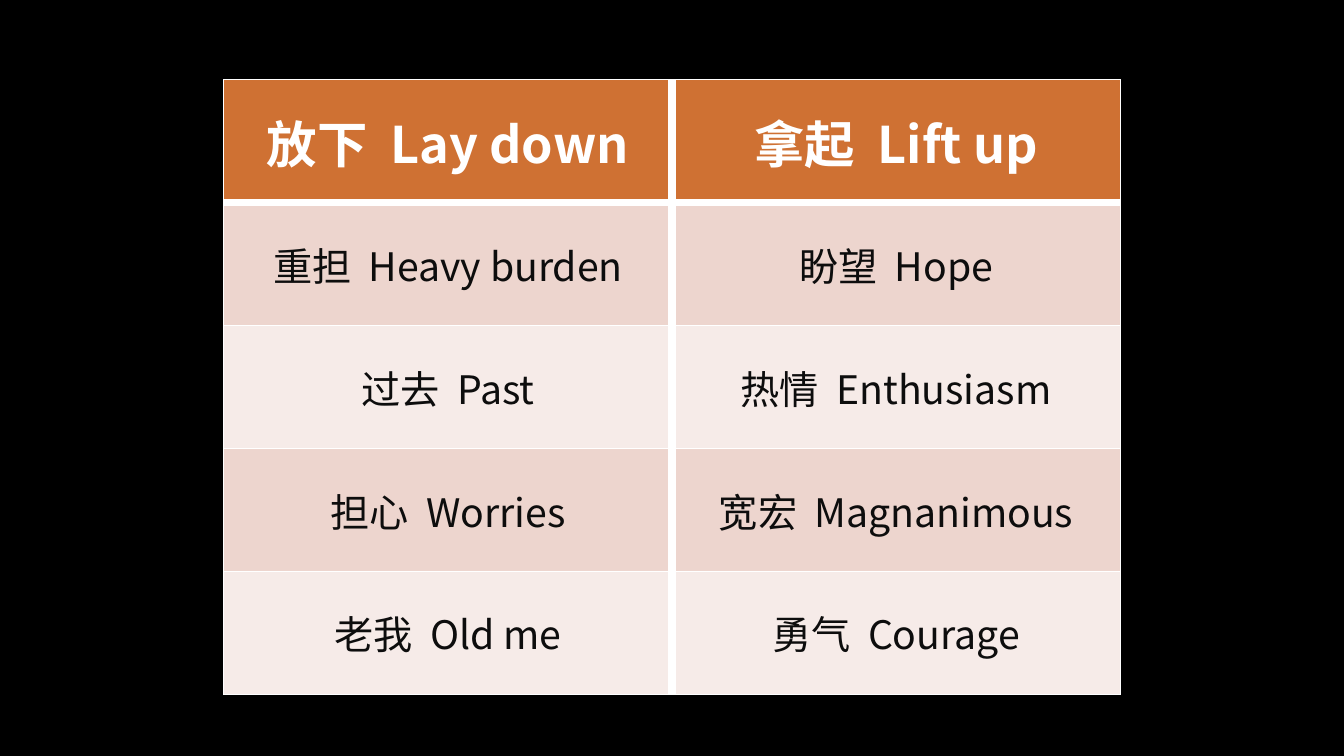
from lxml import etree
from pptx import Presentation
from pptx.dml.color import RGBColor
from pptx.enum.text import MSO_ANCHOR, PP_ALIGN
from pptx.oxml.ns import qn
from pptx.util import Inches, Pt

CENTER = PP_ALIGN.CENTER
MIDDLE = MSO_ANCHOR.MIDDLE
FONT = "Noto Sans CJK JP"
COLORS = {
    "background": "000000",
    "header": "CF7133",
    "header_text": "FFFFFF",
    "dark_band": "EDD5CE",
    "light_band": "F6EBE8",
    "body_text": "0D0D0D",
    "border": "FFFFFF",
}
ROWS = [
    [("放下", "Lay down"), ("拿起", "Lift up")],
    [("重担", "Heavy burden"), ("盼望", "Hope")],
    [("过去", "Past"), ("热情", "Enthusiasm")],
    [("担心", "Worries"), ("宽宏", "Magnanimous")],
    [("老我", "Old me"), ("勇气", "Courage")],
]


def rgb(name):
    return RGBColor.from_string(COLORS[name])


def set_borders(cell, widths):
    tcPr = cell._tc.get_or_add_tcPr()
    for i, (side, width) in enumerate(widths.items()):
        ln = etree.Element(qn(f"a:ln{side}"), w=str(Pt(width)))
        fill = etree.SubElement(ln, qn("a:solidFill"))
        etree.SubElement(fill, qn("a:srgbClr"), val=COLORS["border"])
        tcPr.insert(i, ln)


def write_phrase(cell, chinese, english, size, color, bold):
    cell.vertical_anchor = MIDDLE
    p = cell.text_frame.paragraphs[0]
    p.alignment = CENTER
    for text in (chinese, " ", english):
        r = p.add_run()
        r.text = text
        r.font.name = FONT
        r.font.size = Pt(size)
        r.font.bold = bold
        r.font.color.rgb = rgb(color)
        rPr = r._r.get_or_add_rPr()
        etree.SubElement(rPr, qn("a:ea"), typeface=FONT)
        if text == " ":
            rPr.set("spc", str(round(size * 22)))


def add_contrast_table(s, left, top, width, height):
    shape = s.shapes.add_table(len(ROWS), 2, left, top, width, height)
    table = shape.table
    for i, row in enumerate(ROWS):
        header = i == 0
        band = "header" if header else "dark_band" if i % 2 else "light_band"
        for j, (chinese, english) in enumerate(row):
            cell = table.cell(i, j)
            cell.fill.solid()
            cell.fill.fore_color.rgb = rgb(band)
            set_borders(cell, {
                "L": 6 if j == 1 else 1,
                "R": 6 if j == 0 else 1,
                "T": 6 if i == 1 else 1,
                "B": 6 if header else 1,
            })
            write_phrase(cell, chinese, english, 36 if header else 28,
                         "header_text" if header else "body_text", header)


def main():
    prs = Presentation()
    prs.slide_width, prs.slide_height = Inches(13.33), Inches(7.5)
    s = prs.slides.add_slide(prs.slide_layouts[6])
    s.background.fill.solid()
    s.background.fill.fore_color.rgb = rgb("background")
    add_contrast_table(s, Inches(2.22), Inches(0.79), Inches(8.89), Inches(6.1))
    prs.save("out.pptx")


if __name__ == "__main__":
    main()
